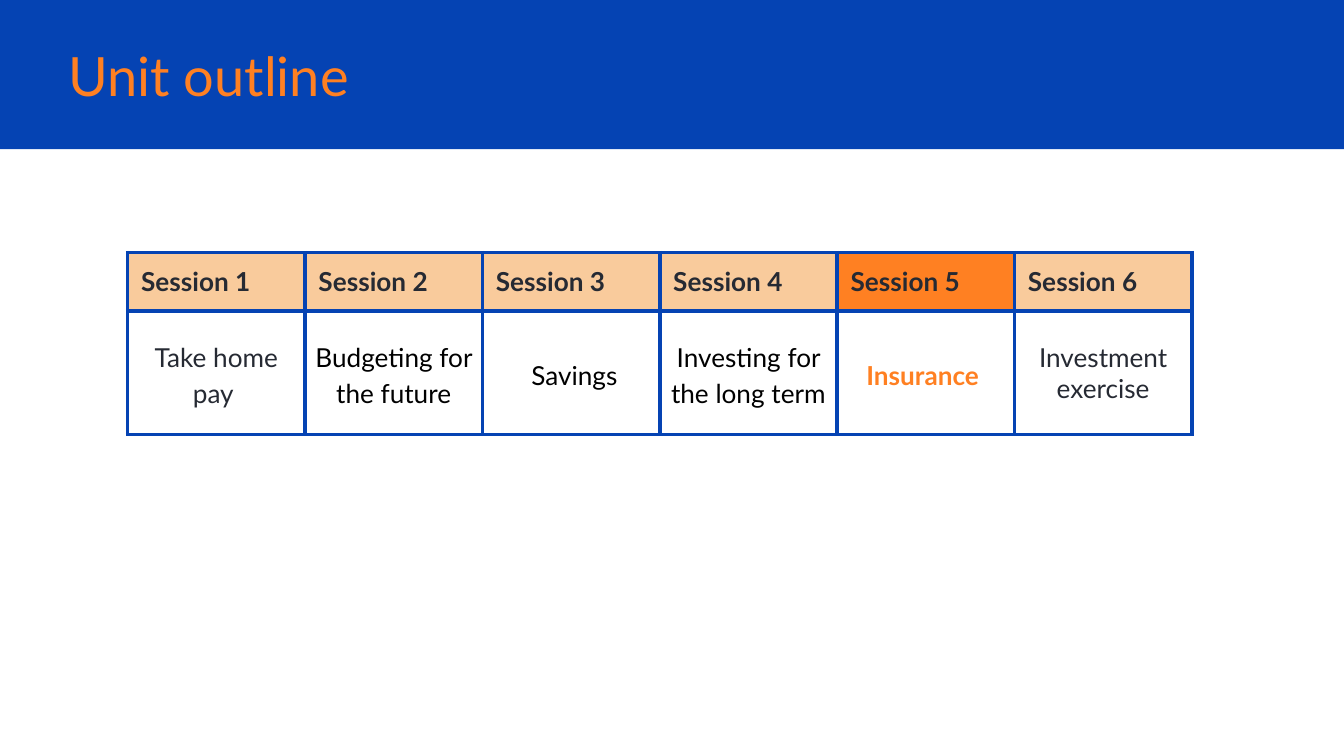
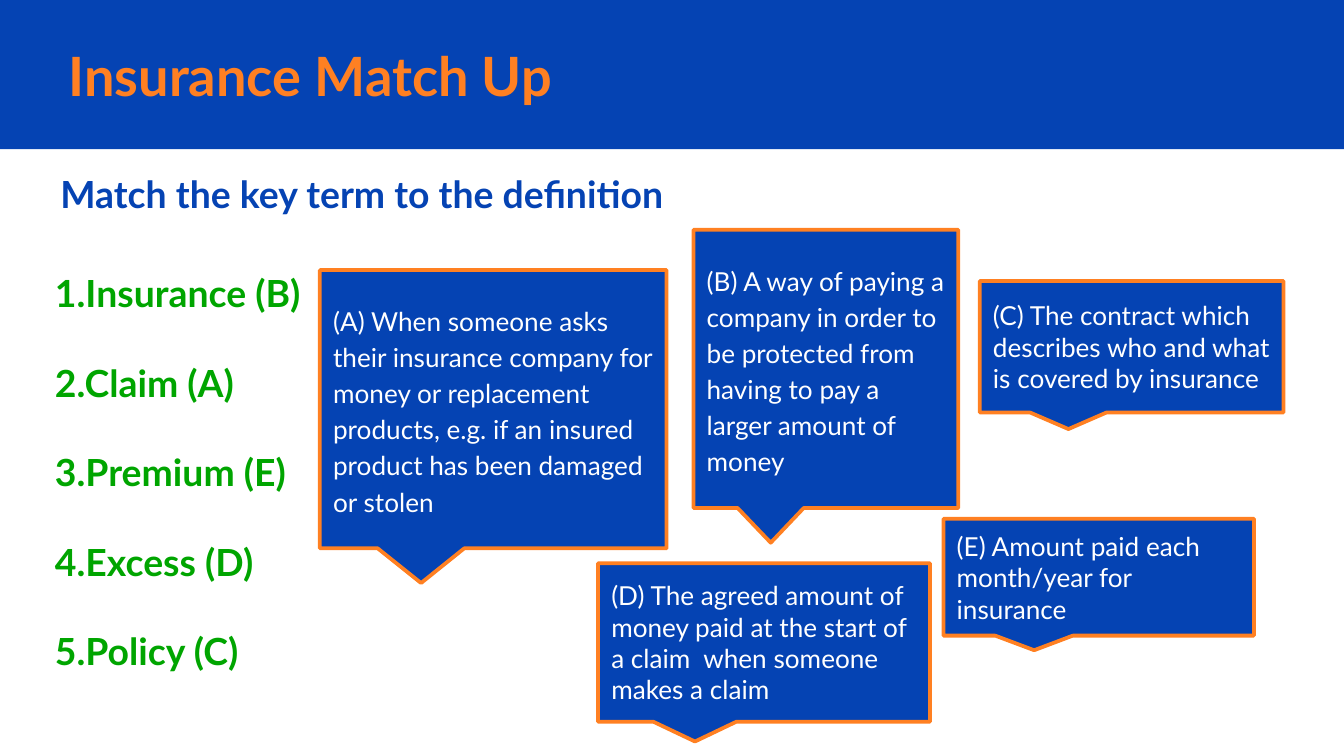
from lxml.etree import SubElement
from pptx import Presentation
from pptx.dml.color import RGBColor
from pptx.enum.shapes import MSO_SHAPE
from pptx.enum.text import MSO_ANCHOR, MSO_AUTO_SIZE, PP_ALIGN
from pptx.oxml import parse_xml
from pptx.oxml.ns import nsdecls, qn
from pptx.util import Inches, Pt

FONT = "Lato"
BLUE, ORANGE, PEACH, GREEN = "0543B3", "FF8022", "F9CB9C", "00A500"
INK, BLACK, WHITE = "262A33", "000000", "FFFFFF"


def rgb(color):
    return RGBColor.from_string(color)


def set_margins(target, x, y):
    target.margin_left = target.margin_right = Inches(x)
    target.margin_top = target.margin_bottom = Inches(y)


def style(p, size, color, bold=False, align=PP_ALIGN.LEFT, spacing=1.0):
    p.alignment = align
    p.line_spacing = spacing
    for r in p.runs:
        r.font.name = FONT
        r.font.size = Pt(size)
        r.font.bold = bold
        r.font.color.rgb = rgb(color)


def set_borders(cell, color, width):
    tcPr = cell._tc.get_or_add_tcPr()
    for i, side in enumerate(("lnL", "lnR", "lnT", "lnB")):
        ln = parse_xml(f'<a:{side} {nsdecls("a")} w="{Pt(width)}"/>')
        fill = SubElement(ln, qn("a:solidFill"))
        SubElement(fill, qn("a:srgbClr"), val=color)
        tcPr.insert(i, ln)


class Deck:
    def __init__(self):
        self.prs = Presentation()
        self.prs.slide_width = Inches(10)
        self.prs.slide_height = self.prs.slide_width * 9 // 16
        self.layout = self.prs.slide_layouts[5]
        self.s = None

    def add_slide(self, title, title_width, bold=False):
        self.s = self.prs.slides.add_slide(self.layout)
        if len(self.prs.slides) == 1:
            self.band()
        sp = self.s.shapes.title
        sp.left, sp.top = Inches(0.41), Inches(0.28)
        sp.width, sp.height = Inches(title_width), Inches(0.56)
        tf = sp.text_frame
        tf.text = title
        tf.auto_size = MSO_AUTO_SIZE.NONE
        tf.vertical_anchor = MSO_ANCHOR.MIDDLE
        set_margins(tf, 0.1, 0.1)
        style(tf.paragraphs[0], 29, ORANGE, bold)

    def band(self):
        """Move a blue title band to the layout, where every slide shares it."""
        band = self.shape(MSO_SHAPE.RECTANGLE, 0, 0, 10, 1.11)
        band.line.fill.background()
        band._element.nvSpPr.cNvPr.set("id", "20")
        self.layout.shapes._spTree.insert(2, band._element)

    def shape(self, kind, x, y, w, h):
        sp = self.s.shapes.add_shape(kind, Inches(x), Inches(y), Inches(w), Inches(h))
        sp.shadow.inherit = False
        sp.fill.solid()
        sp.fill.fore_color.rgb = rgb(BLUE)
        return sp

    def text(self, lines, x, y, w, h, color, anchor=MSO_ANCHOR.TOP, gap=0):
        """Add bold lines with gap points between them."""
        tf = self.s.shapes.add_textbox(Inches(x), Inches(y), Inches(w), Inches(h)).text_frame
        tf.word_wrap = True
        tf.vertical_anchor = anchor
        set_margins(tf, 0.1, 0.1)
        tf.text = "\n".join(lines)
        for i, p in enumerate(tf.paragraphs):
            style(p, 20, color, bold=True)
            p.space_before = Pt(gap if i else 0)

    def callout(self, text, x, y, w, h, spacing=1.0):
        sp = self.shape(MSO_SHAPE.ROUNDED_RECTANGULAR_CALLOUT, x, y, w, h)
        for i, value in enumerate((-0.208, 0.625, 0)):
            sp.adjustments[i] = value
        sp.line.color.rgb = rgb(ORANGE)
        sp.line.width = Pt(2)
        tf = sp.text_frame
        tf.word_wrap = True
        tf.vertical_anchor = MSO_ANCHOR.MIDDLE
        set_margins(tf, 0.1, 0.05)
        tf.text = text
        style(tf.paragraphs[0], 14, WHITE, spacing=spacing)

    def session_table(self, sessions, current, x, y, col_width, row_heights):
        """sessions holds (topic, colour, line spacing, margin) per column."""
        table = self.s.shapes.add_table(
            2, len(sessions), Inches(x), Inches(y),
            Inches(col_width * len(sessions)), Inches(sum(row_heights))).table
        for row, height in zip(table.rows, row_heights):
            row.height = Inches(height)
        for i, (topic, color, spacing, margin) in enumerate(sessions):
            table.columns[i].width = Inches(col_width)
            is_current = i + 1 == current
            head, body = table.cell(0, i), table.cell(1, i)
            head.text, body.text = f"Session {i + 1}", topic
            set_margins(head, 0.1, 0.1)
            set_margins(body, margin, margin)
            body.vertical_anchor = MSO_ANCHOR.MIDDLE
            style(head.text_frame.paragraphs[0], 14, INK, bold=True)
            style(body.text_frame.paragraphs[0], 14, color, is_current,
                  PP_ALIGN.CENTER, spacing)
            for cell, fill in ((head, ORANGE if is_current else PEACH), (body, WHITE)):
                cell.fill.solid()
                cell.fill.fore_color.rgb = rgb(fill)
                set_borders(cell, BLUE, 2.25)


def outline_slide(deck):
    deck.add_slide("Unit outline", 8.46)
    sessions = [
        ("Take home pay ", INK, 1.15, 0.07),
        ("Budgeting for the future", BLACK, 1.15, 0.07),
        (" Savings", BLACK, 1.15, 0.07),
        ("Investing for the long term", BLACK, 1.15, 0.07),
        ("Insurance ", ORANGE, 1.15, 0.07),
        ("Investment exercise", INK, 1.0, 0.1),
    ]
    deck.session_table(sessions, 5, 0.95, 1.88, 1.32, (0.39, 0.92))


def match_up_slide(deck):
    deck.add_slide("Insurance Match Up", 7.6, bold=True)
    deck.text(["Match the key term to the definition"],
              0.35, 1.17, 8.85, 0.54, BLUE, MSO_ANCHOR.MIDDLE)
    terms = ["Insurance (B)", "Claim (A)", "Premium (E)", "Excess (D)", "Policy (C)"]
    deck.text([f"{n}.{term}" for n, term in enumerate(terms, 1)],
              0.31, 1.91, 3.28, 3.23, GREEN, gap=24)
    deck.callout("(C) The contract which describes who and what is covered by insurance",
                 7.29, 2.09, 2.26, 0.98)
    deck.callout("(B) A way of paying a company in order to be protected from "
                 "having to pay a larger amount of money",
                 5.16, 1.71, 1.97, 2.07, spacing=1.15)
    deck.callout("(E) Amount paid each month/year for insurance",
                 7.02, 3.86, 2.31, 0.87)
    deck.callout("(A) When someone asks their insurance company for money or replacement "
                 "products, e.g. if an insured product has been damaged or stolen",
                 2.38, 2.01, 2.58, 2.07, spacing=1.15)
    deck.callout("(D) The agreed amount of money paid at the start of a claim  when "
                 "someone makes a claim",
                 4.45, 4.19, 2.47, 1.18)


def main():
    deck = Deck()
    outline_slide(deck)
    match_up_slide(deck)
    deck.prs.save("out.pptx")


if __name__ == "__main__":
    main()
